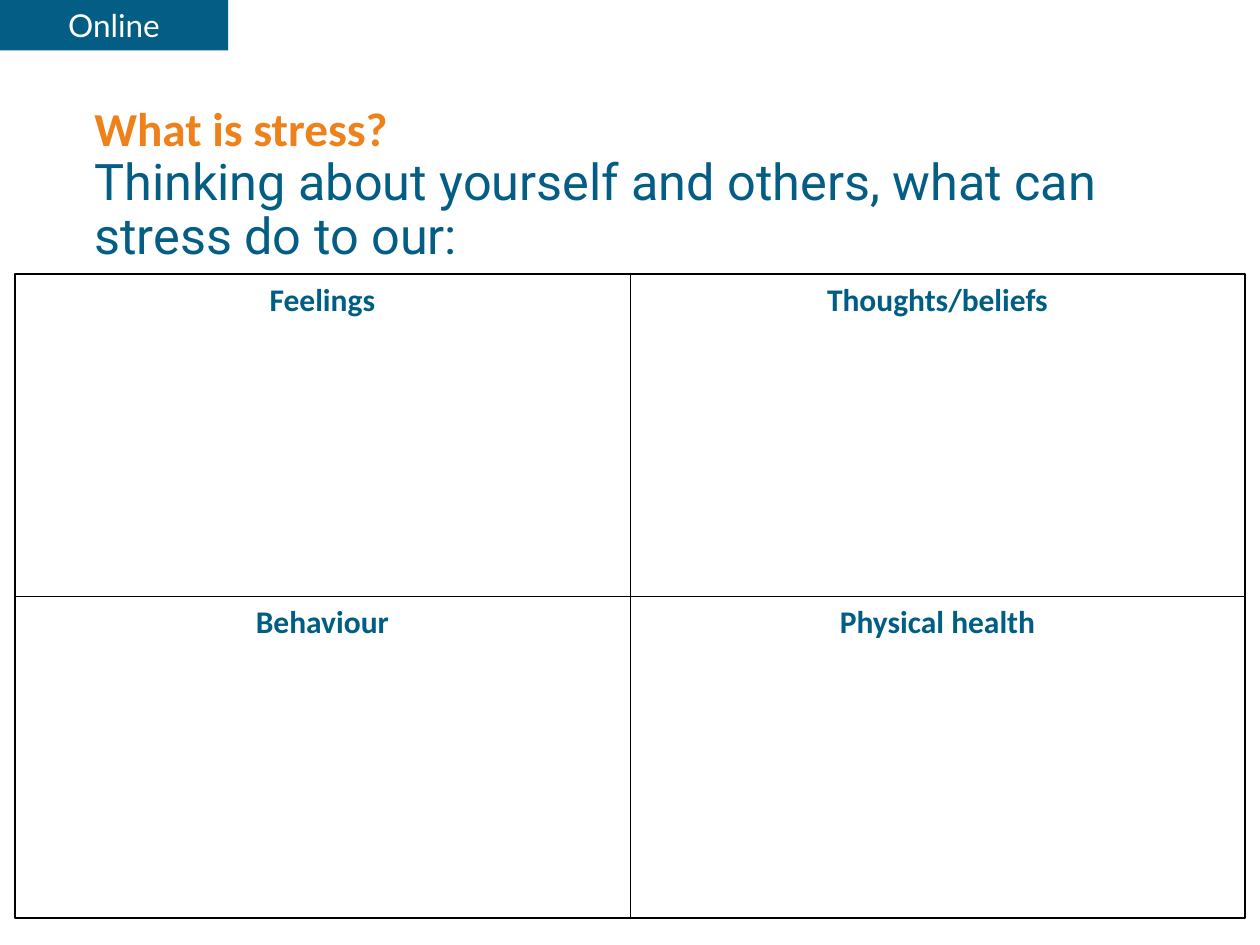
"""Builds the "What is stress?" worksheet slide."""
from lxml import etree
from pptx import Presentation
from pptx.dml.color import RGBColor
from pptx.enum.shapes import MSO_CONNECTOR, MSO_SHAPE
from pptx.enum.text import MSO_ANCHOR, MSO_AUTO_SIZE, PP_ALIGN
from pptx.oxml.ns import qn
from pptx.util import Cm, Pt

RECT = MSO_SHAPE.RECTANGLE
STRAIGHT = MSO_CONNECTOR.STRAIGHT
TOP, MIDDLE = MSO_ANCHOR.TOP, MSO_ANCHOR.MIDDLE
LEFT, CENTER = PP_ALIGN.LEFT, PP_ALIGN.CENTER
NO_FIT = MSO_AUTO_SIZE.NONE

WHITE = RGBColor(0xFF, 0xFF, 0xFF)
BLACK = RGBColor(0, 0, 0)
ORANGE = RGBColor(0xEF, 0x81, 0x1B)
BLUE = RGBColor(0x03, 0x5D, 0x85)
HEADING_BLUE = RGBColor(0x00, 0x5E, 0x84)


class SlideBuilder:
    STYLES = {
        "topic": {"name": "Calibri", "size": Pt(27), "bold": True, "color": ORANGE},
        "question": {"name": "Roboto", "size": Pt(28.8), "bold": False, "color": BLUE},
        "tab": {"name": "Lato", "size": Pt(18), "bold": False, "color": WHITE},
        "heading": {"name": "Calibri", "size": Pt(18), "bold": True, "color": HEADING_BLUE},
    }

    def __init__(self, prs):
        self.s = prs.slides.add_slide(prs.slide_layouts[5])

    def add_text(self, p, text, style, **paragraph_format):
        for name, value in paragraph_format.items():
            setattr(p, name, value)
        r = p.add_run()
        r.text = text
        for name, value in self.STYLES[style].items():
            if name == "color":
                r.font.color.rgb = value
            else:
                setattr(r.font, name, value)

    def title(self, box, lines):
        sp = self.s.shapes.title
        sp.left, sp.top, sp.width, sp.height = map(Cm, box)
        tf = sp.text_frame
        frame_format = {
            "margin_left": 0, "margin_top": 0, "margin_right": 0, "margin_bottom": 0,
            "vertical_anchor": TOP, "auto_size": NO_FIT, "word_wrap": True,
        }
        for name, value in frame_format.items():
            setattr(tf, name, value)
        for i, (text, style) in enumerate(lines):
            p = tf.add_paragraph() if i else tf.paragraphs[0]
            self.add_text(p, text, style, alignment=LEFT, line_spacing=0.9)

    def rect(self, box, fill=None, line=None):
        sp = self.s.shapes.add_shape(RECT, *map(Cm, box))
        sp.shadow.inherit = False
        if fill is None:
            sp.fill.background()
        else:
            sp.fill.solid()
            sp.fill.fore_color.rgb = fill
        if line is None:
            sp.line.fill.background()
        else:
            sp.line.color.rgb = line
            sp.line.width = Pt(1)
        return sp

    def tab(self, box, text):
        tf = self.rect(box, fill=BLUE).text_frame
        tf.vertical_anchor = MIDDLE
        self.add_text(tf.paragraphs[0], text, "tab", alignment=CENTER)

    def divider(self, frame, start, end):
        cxn = self.s.shapes.add_connector(STRAIGHT, 0, 0, 0, 0)
        cxn.begin_connect(frame, start)
        cxn.end_connect(frame, end)
        cxn.line.color.rgb = BLACK
        cxn.line.width = Pt(0.5)
        etree.SubElement(cxn._element.spPr, qn("a:effectLst"))

    def heading(self, box, text):
        tf = self.s.shapes.add_textbox(*map(Cm, box)).text_frame
        tf.word_wrap = True
        self.add_text(tf.paragraphs[0], text, "heading", alignment=CENTER, space_after=Pt(6))


def main():
    prs = Presentation()
    prs.slide_width, prs.slide_height = Cm(25.4), Cm(19.05)
    b = SlideBuilder(prs)

    b.title((1.9, 2.13, 20.6, 3.38), [
        ("What is stress?", "topic"),
        ("Thinking about yourself and others, what can stress do to our:", "question"),
    ])
    b.tab((0, 0, 4.6, 1.02), "Online")

    left, top, width, height = 0.3, 5.53, 24.8, 12.98
    frame = b.rect((left, top, width, height), line=BLACK)
    b.divider(frame, 0, 2)
    b.divider(frame, 3, 1)

    headings = [["Feelings", "Thoughts/beliefs"], ["Behaviour", "Physical health"]]
    for row, texts in enumerate(headings):
        for col, text in enumerate(texts):
            b.heading((left + col * width / 2, top + row * height / 2, width / 2, 1.07), text)

    prs.save("out.pptx")


if __name__ == "__main__":
    main()
